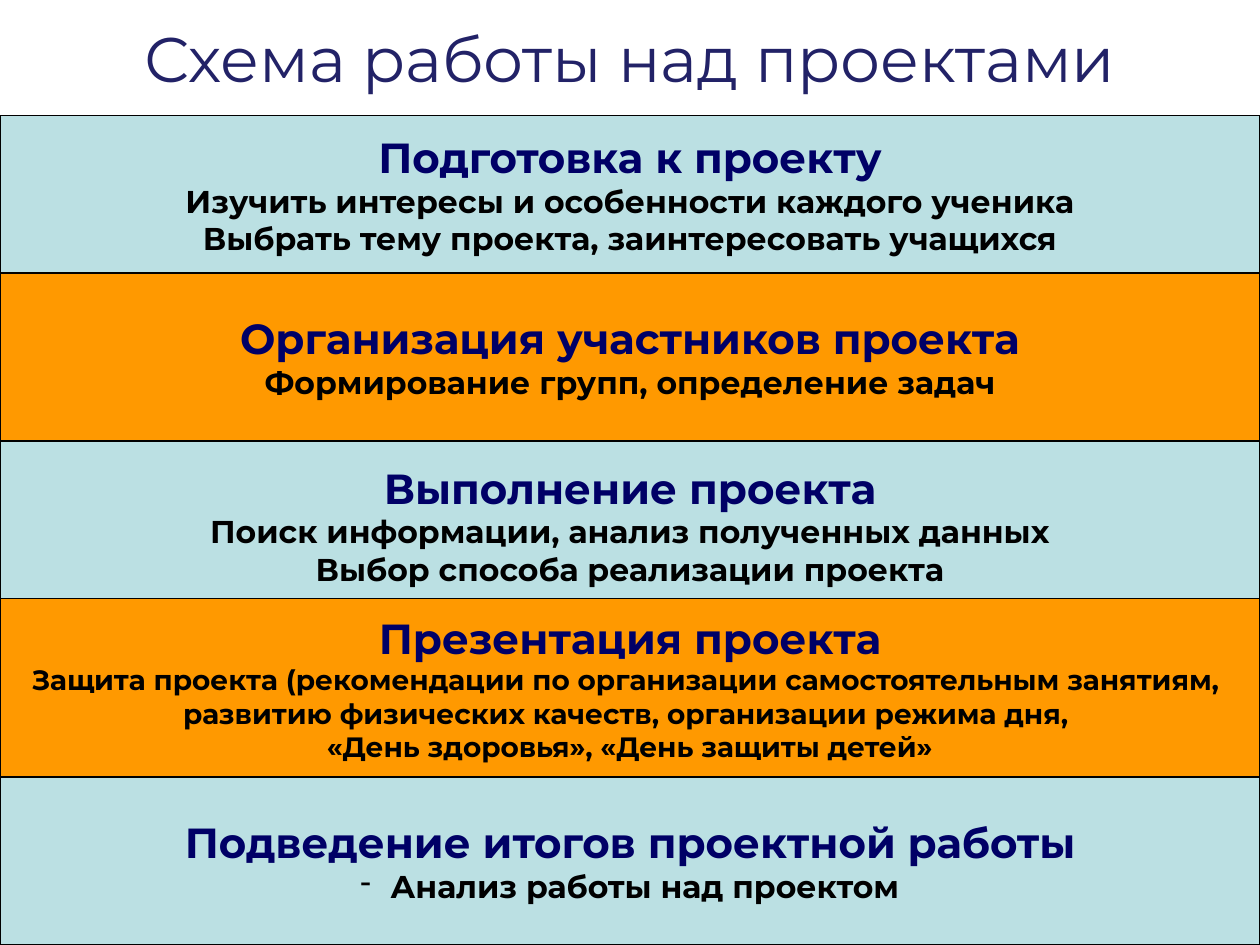
from pptx import Presentation
from pptx.dml.color import RGBColor
from pptx.enum.shapes import MSO_SHAPE
from pptx.enum.text import MSO_ANCHOR, MSO_AUTO_SIZE, PP_ALIGN
from pptx.oxml.ns import qn
from pptx.util import Pt
from lxml import etree

RECT = MSO_SHAPE.RECTANGLE
MIDDLE = MSO_ANCHOR.MIDDLE
CENTER = PP_ALIGN.CENTER
NO_FIT = MSO_AUTO_SIZE.NONE

WIDTH, HEIGHT = 720, 540
TITLE = "Схема работы над проектами"
# top, height, heading, detail size, details, bullet
STAGES = [
    (66, 90, "Подготовка к проекту", "detail",
     ["Изучить интересы и особенности каждого ученика",
      "Выбрать тему проекта, заинтересовать учащихся"], None),
    (156, 96, "Организация участников проекта", "detail",
     ["Формирование групп, определение задач"], None),
    (252, 96, "Выполнение проекта", "detail",
     ["Поиск информации, анализ полученных данных",
      "Выбор способа реализации проекта"], None),
    (342, 102, "Презентация проекта", "small",
     ["Защита проекта (рекомендации по организации самостоятельным занятиям, ",
      "развитию физических качеств, организации режима дня, ",
      "«День здоровья», «День защиты детей»"], None),
    (444, 96, "Подведение итогов проектной работы", "detail",
     ["Анализ работы над проектом"], "-"),
]
THEME = {
    "font": "Montserrat",
    "bands": ["BBE0E3", "FF9900"],
    "line": "000000",
    "title": (36, "222267", False),
    "heading": (24, "000066", True),
    "detail": (18, "000000", True),
    "small": (16, "000000", True),
}


def color(code):
    return RGBColor.from_string(code)


def style(para, role):
    size, code, bold = THEME[role]
    para.alignment = CENTER
    for run in para.runs:
        font = run.font
        font.name, font.size, font.bold = THEME["font"], Pt(size), bold
        font.color.rgb = color(code)


def add_bullet(para, mark, indent=17):
    props = para._p.get_or_add_pPr()
    props.set("marL", str(Pt(indent)))
    props.set("indent", str(-Pt(indent)))
    etree.SubElement(props, qn("a:buChar")).set("char", mark)


def add_stage(slide, index, stage):
    top, height, heading, role, details, mark = stage
    band = slide.shapes.add_shape(RECT, 0, Pt(top), Pt(WIDTH), Pt(height))
    band.shadow.inherit = False
    band.fill.solid()
    band.fill.fore_color.rgb = color(THEME["bands"][index % 2])
    band.line.color.rgb = color(THEME["line"])
    band.line.width = Pt(0.75)
    frame = band.text_frame
    frame.word_wrap = False
    frame.vertical_anchor = MIDDLE
    frame.text = "\n".join([heading, *details])
    first, *rest = frame.paragraphs
    style(first, "heading")
    for para in rest:
        if mark:
            add_bullet(para, mark)
        style(para, role)


def main():
    deck = Presentation()
    deck.slide_width, deck.slide_height = Pt(WIDTH), Pt(HEIGHT)
    slide = deck.slides.add_slide(deck.slide_layouts[5])
    title = slide.shapes.title
    title.left, title.top = Pt(36), Pt(0)
    title.width, title.height = Pt(WIDTH - 2 * 36), Pt(66)
    frame = title.text_frame
    frame.auto_size = NO_FIT
    frame.vertical_anchor = MIDDLE
    frame.text = TITLE
    style(frame.paragraphs[0], "title")
    for index, stage in enumerate(STAGES):
        add_stage(slide, index, stage)
    deck.save("out.pptx")


if __name__ == "__main__":
    main()
